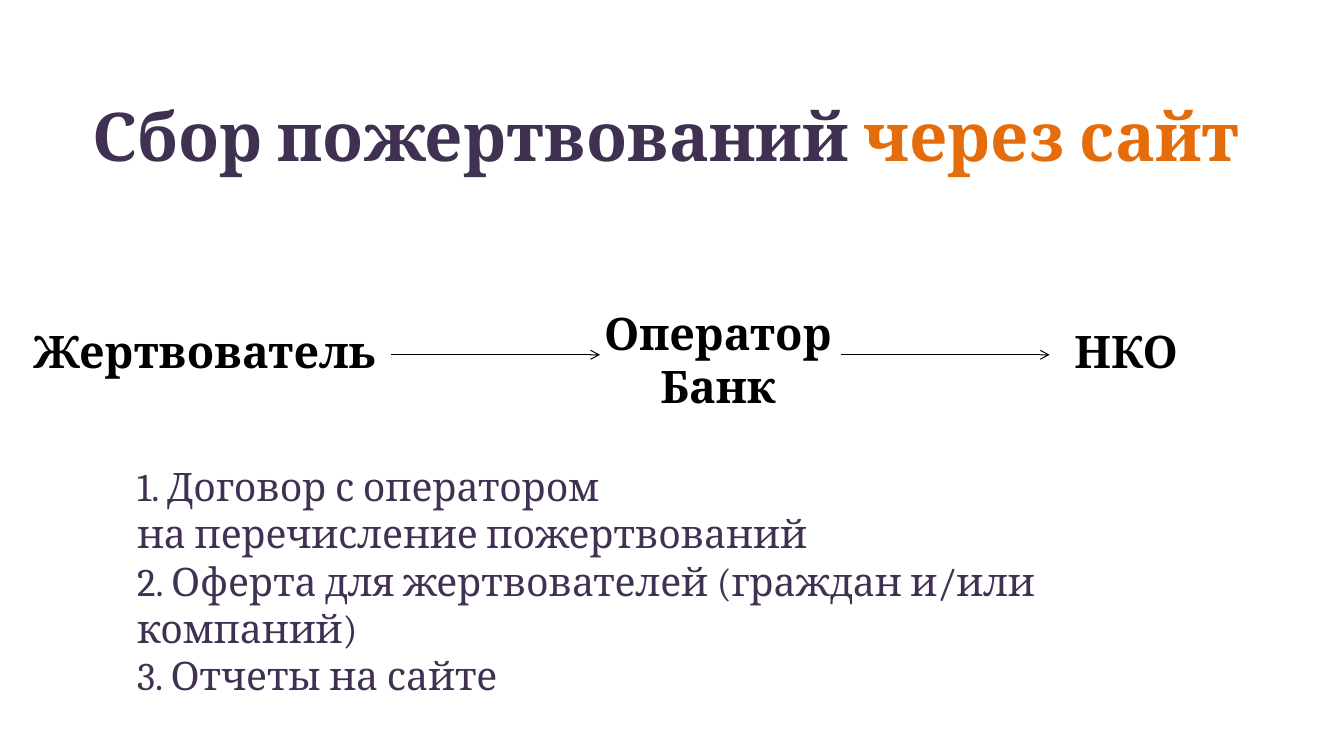
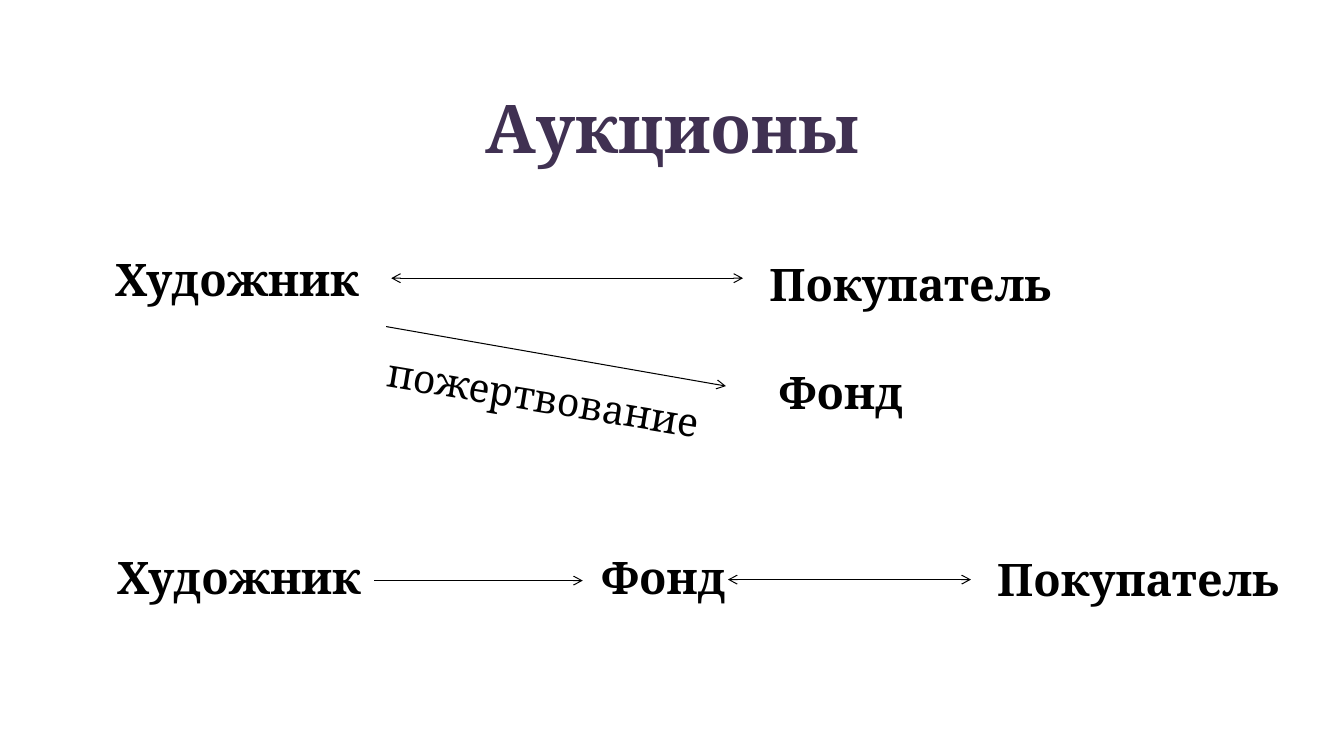
import collections
import dataclasses

import pptx
import pptx.dml.color
import pptx.enum.shapes
import pptx.enum.text
import pptx.oxml.ns
import pptx.oxml.xmlchemy
import pptx.util
from lxml import etree

PX = 9144  # EMU, 100 px to the inch
ALIGN = pptx.enum.text.PP_ALIGN
ANCHOR = pptx.enum.text.MSO_ANCHOR
TITLE_AND_BODY, TITLE_ONLY = 1, 5

Box = collections.namedtuple("Box", "left top width height")


@dataclasses.dataclass(frozen=True)
class Theme:
    face: str = "Cambria"
    plum: str = "403152"
    orange: str = "E46C0A"
    black: str = "000000"
    title_size: int = 48
    party_size: int = 32
    body_size: int = 28
    line_width: float = 0.75
    party_width: int = 364
    party_height: int = 64


THEME = Theme()
FRAME = {
    "word_wrap": True,
    "auto_size": pptx.enum.text.MSO_AUTO_SIZE.NONE,
}
TITLE = {"size": THEME.title_size, "bold": True}
PARTY = {"size": THEME.party_size, "bold": True}
BODY = {"size": THEME.body_size, "bold": False}


def apply(target, formats):
    for name, value in formats.items():
        setattr(target, name, value)


def inside(box, left, top, width, height):
    """Turn offsets from a region's corner into a box on the slide."""
    return Box(box.left + left, box.top + top, width, height)


def emu(lengths):
    return [pptx.util.Emu(length * PX) for length in lengths]


def write(frame, lines, style, align, anchor=ANCHOR.TOP):
    """Fill a frame with lines, each a list of (text, colour) pieces."""
    apply(frame, FRAME | {"vertical_anchor": anchor})
    for number, pieces in enumerate(lines):
        line = frame.add_paragraph() if number else frame.paragraphs[0]
        apply(line, {"alignment": align, "space_before": pptx.util.Pt(0)})
        for text, colour in pieces:
            run = line.add_run()
            run.text = text
            apply(run.font, style | {"name": THEME.face, "size": pptx.util.Pt(style["size"])})
            run.font.color.rgb = pptx.dml.color.RGBColor.from_string(colour)


def place(placeholder, box):
    apply(placeholder, dict(zip(("left", "top", "width", "height"), emu(box))))


def add_title(slide, box, pieces):
    place(slide.shapes.title, box)
    write(slide.shapes.title.text_frame, [pieces], TITLE, ALIGN.CENTER, ANCHOR.MIDDLE)


def add_steps(slide, box, steps):
    body = slide.placeholders[1]
    place(body, box)
    write(body.text_frame, [[(step, THEME.plum)] for step in steps], BODY, ALIGN.LEFT)
    for paragraph in body.text_frame.paragraphs:
        properties = paragraph._p.get_or_add_pPr()
        properties.set("marL", "0")
        properties.set("indent", "0")
        etree.SubElement(properties, pptx.oxml.ns.qn("a:buNone"))


def add_label(slide, box, lines, style=PARTY, rotation=0):
    label = slide.shapes.add_textbox(*emu(box))
    label.rotation = rotation
    write(label.text_frame, [[(line, THEME.black)] for line in lines], style, ALIGN.CENTER)


def add_party(slide, box, left, top, *lines, width=THEME.party_width):
    height = THEME.party_height * len(lines)
    add_label(slide, inside(box, left, top, width, height), lines)


def add_arrow(slide, box, start, end, both_ways=False):
    ends = (box.left + start[0], box.top + start[1], box.left + end[0], box.top + end[1])
    arrow = slide.shapes.add_connector(pptx.enum.shapes.MSO_CONNECTOR.STRAIGHT, *emu(ends))
    arrow.line.width = pptx.util.Pt(THEME.line_width)
    arrow.line.color.rgb = pptx.dml.color.RGBColor.from_string(THEME.black)
    properties = arrow.element.spPr
    outline = properties.find(pptx.oxml.ns.qn("a:ln"))
    for tip in ("a:headEnd", "a:tailEnd") if both_ways else ("a:tailEnd",):
        etree.SubElement(outline, pptx.oxml.ns.qn(tip), type="arrow")
    etree.SubElement(properties, pptx.oxml.ns.qn("a:effectLst"))


def donation_flow(slide, box):
    add_party(slide, box, 0, 18, "Жертвователь")
    add_party(slide, box, 509, 0, "Оператор", "Банк")
    add_party(slide, box, 933, 18, "НКО", width=326)
    for left in (367, 813):
        add_arrow(slide, box, (left, 54), (left + 207, 54))


def direct_sale(slide, box):
    """The artist sells to the buyer and donates to the fund."""
    add_party(slide, box, 0, 0, "Художник")
    add_party(slide, box, 668, 5, "Покупатель")
    add_party(slide, box, 599, 112, "Фонд")
    add_arrow(slide, box, (335, 31), (684, 31), both_ways=True)
    add_arrow(slide, box, (330, 79), (667, 138))
    add_label(slide, inside(box, 304, 121, 364, 57), ["пожертвование"], BODY, 9.5)


def sale_through_fund(slide, box):
    add_party(slide, box, 0, 0, "Художник")
    add_party(slide, box, 421, 0, "Фонд")
    add_party(slide, box, 911, 2, "Покупатель", width=326)
    add_arrow(slide, box, (316, 36), (523, 36))
    add_arrow(slide, box, (667, 35), (908, 35), both_ways=True)


def website_slide(deck):
    slide = deck.slides.add_slide(deck.slide_layouts[TITLE_AND_BODY])
    add_title(slide, Box(61, 71, 1200, 125),
              [("Сбор пожертвований ", THEME.plum), ("через сайт", THEME.orange)])
    donation_flow(slide, Box(21, 298, 1259, 118))
    add_steps(slide, Box(126, 454, 1116, 199), [
        "1. Договор с оператором",
        "на перечисление пожертвований",
        "2. Оферта для жертвователей (граждан и/или компаний)",
        "3. Отчеты на сайте",
    ])


def auction_slide(deck):
    slide = deck.slides.add_slide(deck.slide_layouts[TITLE_ONLY])
    add_title(slide, Box(67, 63, 1200, 125), [("Аукционы", THEME.plum)])
    direct_sale(slide, Box(53, 245, 1032, 178))
    sale_through_fund(slide, Box(55, 540, 1237, 66))


def main():
    deck = pptx.Presentation()
    deck.slide_width, deck.slide_height = emu((1333, 750))
    website_slide(deck)
    auction_slide(deck)
    deck.save("out.pptx")


if __name__ == "__main__":
    main()
